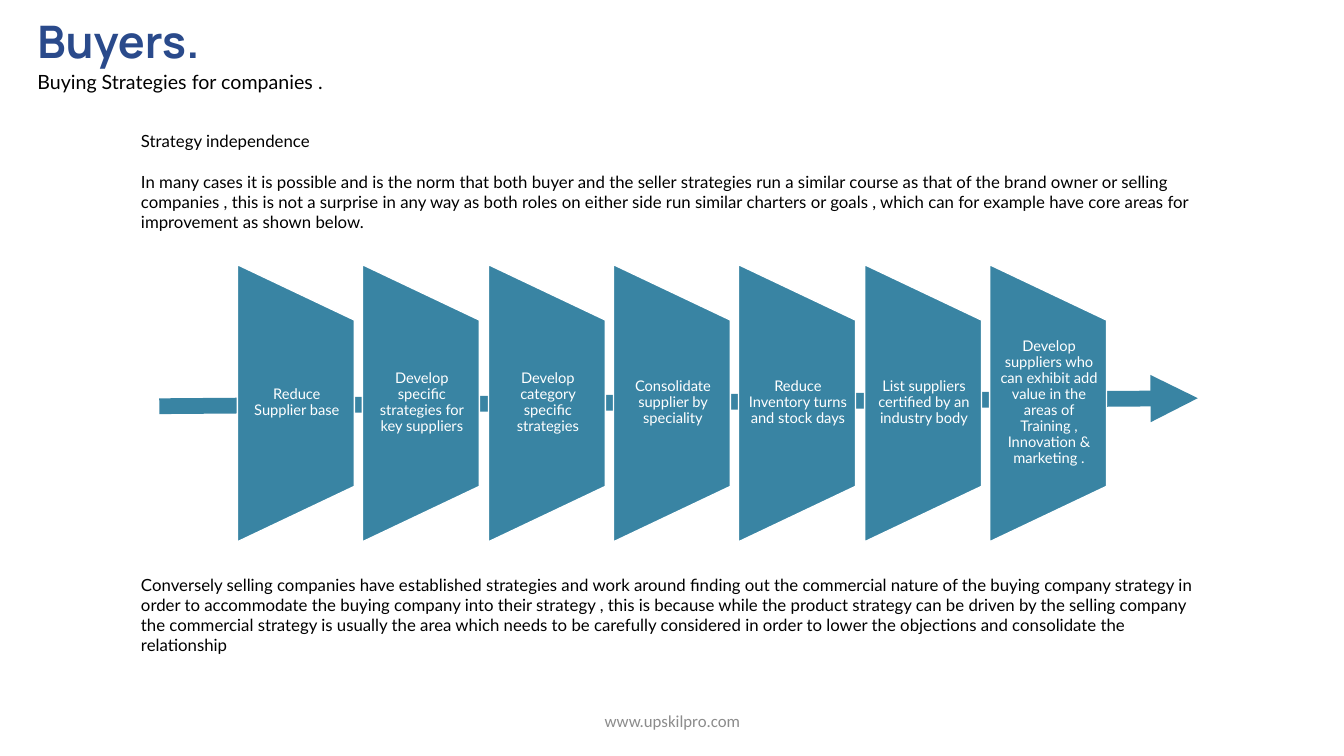
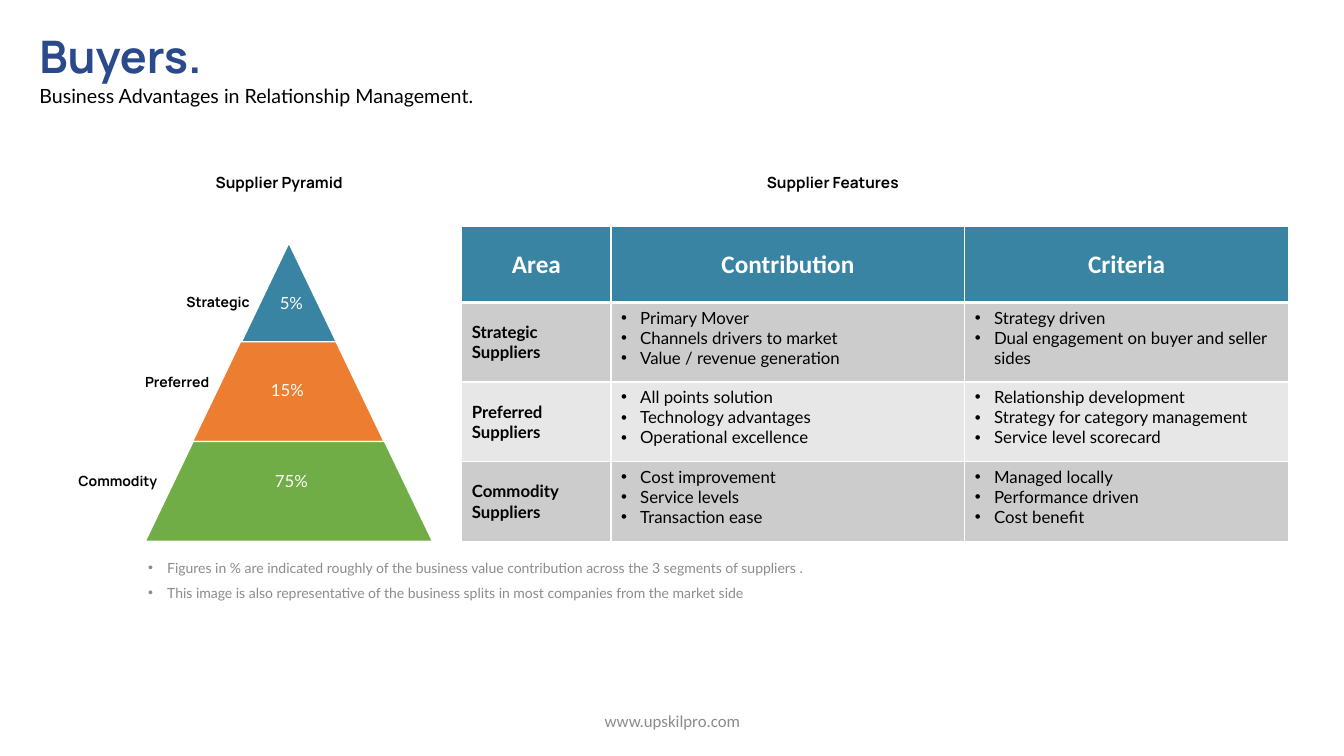
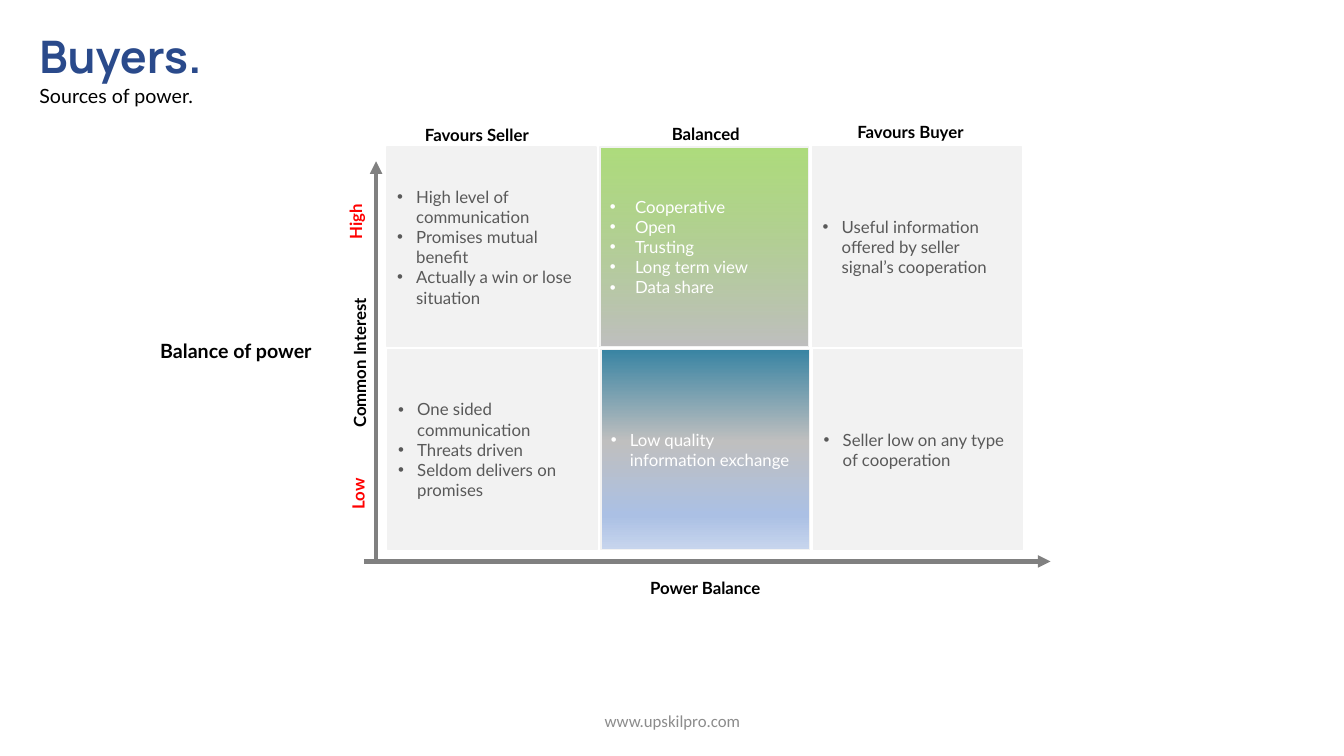
import pptx
import pptx.dml.color
import pptx.enum.shapes
import pptx.enum.text
import pptx.oxml
import pptx.oxml.ns
import pptx.util

PX = 9144
TEAL, ORANGE, GREEN = "3984A3", "ED7D31", "70AD47"
NAVY, BLACK, WHITE, RED = "2A4A8B", "000000", "FFFFFF", "FF0000"
MUTED, AXIS, PANEL, PANEL_TEXT = "8C8C8C", "808080", "F2F2F2", "595959"
BAND_DARK, BAND_LIGHT = "CCCCCC", "E7E7E7"
BODY, HEADING, PLAIN = "Lato", "Manrope", "Calibri"
ALIGN = pptx.enum.text.PP_ALIGN
ANCHOR = pptx.enum.text.MSO_ANCHOR
SHAPE = pptx.enum.shapes.MSO_SHAPE

STRATEGY_INTRO = [
    "Strategy independence",
    "In many cases it is possible and is the norm that both buyer and the seller strategies run a similar "
    "course as that of the brand owner or selling companies , this is not a surprise in any way as both roles "
    "on either side run similar charters or goals , which can for example have core areas for improvement as "
    "shown below.",
]
STRATEGY_CLOSE = [
    "Conversely selling companies have established strategies and work around finding out the commercial "
    "nature of the buying company strategy in order to accommodate the buying company into their strategy , "
    "this is because while the product strategy can be driven by the selling company the commercial strategy "
    "is usually the area which needs to be carefully considered in order to lower the objections and "
    "consolidate the relationship",
]
STEPS = [
    "Reduce Supplier base",
    "Develop specific strategies for key suppliers",
    "Develop category specific strategies",
    "Consolidate supplier by speciality",
    "Reduce Inventory turns and stock days",
    "List suppliers certified by an industry body",
    "Develop suppliers who can exhibit add value in the areas of Training , Innovation & marketing .",
]
TIERS = [
    ("Strategic", "5%", TEAL, (175, 286), (260, 286)),
    ("Preferred", "15%", ORANGE, (134, 365), (256, 372)),
    ("Commodity", "75%", GREEN, (68, 464), (260, 462)),
]
FEATURES = [
    ("Strategic Suppliers",
     ["Primary Mover", "Channels drivers to market", "Value / revenue generation"],
     ["Strategy driven", "Dual engagement on buyer and seller sides"]),
    ("Preferred Suppliers",
     ["All points solution", "Technology advantages", "Operational excellence"],
     ["Relationship development", "Strategy for category management", "Service level scorecard"]),
    ("Commodity Suppliers",
     ["Cost improvement", "Service levels", "Transaction ease"],
     ["Managed locally", "Performance driven", "Cost benefit"]),
]
PYRAMID_NOTES = [
    "Figures in % are indicated roughly of the business value contribution across the 3 segments of suppliers .",
    "This image is also representative of the business splits in most companies from the market side",
]
POWER_GRID = [
    [["High level of communication", "Promises mutual benefit", "Actually a win or lose situation"],
     ["Cooperative", "Open", "Trusting", "Long term view", "Data share"],
     ["Useful information offered by seller signal’s cooperation"]],
    [["One sided communication", "Threats driven", "Seldom delivers on promises"],
     ["Low quality information exchange"],
     ["Seller low on any type of cooperation"]],
]
BALANCED_GRADIENTS = [
    [(0, "92D050", 74), (100, "BFBFBF", 100)],
    [(0, TEAL, 100), (46, "BFBFBF", 100), (83, "ABC0E4", 100), (100, "C7D5ED", 100)],
]


def px(*lengths):
    return [pptx.util.Emu(length * PX) for length in lengths]


def rgb(code):
    return pptx.dml.color.RGBColor.from_string(code)


def xml(tag, content="", attributes=""):
    namespace = pptx.oxml.ns.nsdecls("a")
    return pptx.oxml.parse_xml(f"<a:{tag} {namespace} {attributes}>{content}</a:{tag}>")


def add_run(paragraph, text, size, color, font=BODY, bold=False):
    run = paragraph.add_run()
    run.text = text
    run.font.size = pptx.util.Pt(size)
    run.font.name = font
    run.font.bold = bold
    run.font.color.rgb = rgb(color)


def add_bullet(paragraph, indent):
    properties = paragraph._p.get_or_add_pPr()
    properties.set("marL", str(indent * PX))
    properties.set("indent", str(-indent * PX))
    properties.append(xml("buFont", attributes='typeface="Arial"'))
    properties.append(xml("buChar", attributes='char="•"'))


def write(frame, texts, size=12, color=BLACK, font=BODY, bold=False, align=ALIGN.LEFT,
          indent=0, after=0, spacing=None):
    frame.word_wrap = True
    for index, text in enumerate(texts):
        paragraph = frame.add_paragraph() if index else frame.paragraphs[0]
        if indent:
            add_bullet(paragraph, indent)
        paragraph.alignment = align
        paragraph.space_after = pptx.util.Pt(after)
        if spacing:
            paragraph.line_spacing = spacing
        add_run(paragraph, text, size, color, font, bold)


def add_text(slide, box, texts, anchor=ANCHOR.TOP, rotation=0, **style):
    shape = slide.shapes.add_textbox(*px(*box))
    shape.rotation = rotation
    shape.text_frame.vertical_anchor = anchor
    write(shape.text_frame, texts, **style)
    return shape


def add_label(slide, box, text, **style):
    return add_text(slide, box, [text], **{"bold": True, "align": ALIGN.CENTER, **style})


def add_filled(slide, kind, box, fill, line=WHITE):
    shape = slide.shapes.add_shape(kind, *px(*box))
    shape.shadow.inherit = False
    shape.fill.solid()
    shape.fill.fore_color.rgb = rgb(fill)
    shape.line.color.rgb = rgb(line)
    shape.line.width = pptx.util.Pt(1)
    return shape


def add_arrow(slide, start, end, color, width):
    arrow = slide.shapes.add_connector(pptx.enum.shapes.MSO_CONNECTOR.STRAIGHT, *px(*start, *end))
    arrow.line.color.rgb = rgb(color)
    arrow.line.width = pptx.util.Pt(width)
    arrow.line._get_or_add_ln().append(xml("tailEnd", attributes='type="triangle"'))
    arrow._element.spPr.append(xml("effectLst"))


def set_gradient(shape, stops):
    content = "".join(
        f'<a:gs pos="{position * 1000}"><a:srgbClr val="{color}">'
        f'<a:alpha val="{opacity * 1000}"/></a:srgbClr></a:gs>'
        for position, color, opacity in stops)
    properties = shape._element.spPr
    solid = properties.find(pptx.oxml.ns.qn("a:solidFill"))
    properties.replace(solid, xml("gradFill", f'<a:gsLst>{content}</a:gsLst><a:lin ang="5400000" scaled="0"/>'))


def set_cell(cell, texts, fill, anchor, bottom=1, **style):
    write(cell.text_frame, texts, **style)
    cell.vertical_anchor = anchor
    properties = cell._tc.get_or_add_tcPr()
    for side, width in (("lnL", 1), ("lnR", 1), ("lnT", 1), ("lnB", bottom)):
        properties.append(xml(side, f'<a:solidFill><a:srgbClr val="{WHITE}"/></a:solidFill>',
                              f'w="{pptx.util.Pt(width)}"'))
    cell.fill.solid()
    cell.fill.fore_color.rgb = rgb(fill)


def add_slide(presentation, subtitle, left=29, top=23):
    slide = presentation.slides.add_slide(presentation.slide_layouts[5])
    title = slide.shapes.title
    title.left, title.top, title.width, title.height = px(left, top, 701, 88)
    frame = title.text_frame
    frame.auto_size = pptx.enum.text.MSO_AUTO_SIZE.NONE
    frame.vertical_anchor = ANCHOR.TOP
    write(frame, ["Buyers."], size=32, color=NAVY, font=HEADING, bold=True)
    paragraph = frame.add_paragraph()
    paragraph.alignment = ALIGN.LEFT
    paragraph.line_spacing = 1.07
    add_run(paragraph, subtitle, 14, BLACK)
    add_text(slide, (442, 695, 450, 40), ["www.upskilpro.com"], anchor=ANCHOR.MIDDLE,
             color=MUTED, font=PLAIN, align=ALIGN.CENTER)
    return slide


def add_step(slide, left, text):
    width, height, middle = 116, 275, 400
    block = add_filled(slide, SHAPE.FLOWCHART_MANUAL_OPERATION,
                       (left + (width - height) // 2, middle - width // 2, height, width), TEAL)
    block.rotation = 270
    label = add_text(slide, (left, 317, width, 165), [text], anchor=ANCHOR.MIDDLE,
                     size=10.5, color=WHITE, align=ALIGN.CENTER, spacing=0.9)
    frame = label.text_frame
    frame.margin_left, frame.margin_top, frame.margin_right, frame.margin_bottom = px(8, 0, 7, 0)


def build_strategies(presentation):
    slide = add_slide(presentation, "Buying Strategies for companies .", 27, 9)
    add_text(slide, (130, 125, 1072, 120), STRATEGY_INTRO, after=14.4)
    add_text(slide, (130, 565, 1072, 95), STRATEGY_CLOSE)
    add_arrow(slide, (158, 403), (1188, 395), TEAL, 11.25)
    for index, text in enumerate(STEPS):
        add_step(slide, 236 + round(746 * index / 6), text)


def add_pyramid(slide):
    step, height = 95, 99
    for index, (name, share, color, name_at, share_at) in enumerate(TIERS):
        width = step * (index + 1)
        tier = add_filled(slide, SHAPE.TRAPEZOID,
                          (286 - width // 2, 241 + 197 * index // 2, width, height), color)
        tier.adjustments[0] = round(step / 2 / min(width, height), 2)
        add_label(slide, (*name_at, 137, 27), name, anchor=ANCHOR.MIDDLE,
                  size=10, font=HEADING, align=ALIGN.LEFT)
        add_label(slide, (*share_at, 58, 30), share, color=WHITE, bold=False)


def add_feature_table(slide):
    table = slide.shapes.add_table(4, 3, *px(458, 225, 820, 312)).table
    table.horz_banding = False
    for column, width in zip(table.columns, px(148, 351, 321)):
        column.width = width
    for row, height in zip(table.rows, px(75, 79, 79, 79)):
        row.height = height
    for column, heading in enumerate(["Area", "Contribution", "Criteria"]):
        set_cell(table.cell(0, column), [heading], TEAL, ANCHOR.MIDDLE, bottom=3,
                 size=18, color=WHITE, font=PLAIN, bold=True, align=ALIGN.CENTER)
    for row, (area, *lists) in enumerate(FEATURES, 1):
        fill = BAND_DARK if row % 2 else BAND_LIGHT
        set_cell(table.cell(row, 0), [area], fill, ANCHOR.MIDDLE, bold=True)
        for column, items in enumerate(lists, 1):
            set_cell(table.cell(row, column), items, fill, ANCHOR.TOP, indent=19)


def build_relationships(presentation):
    slide = add_slide(presentation, "Business Advantages in Relationship Management.")
    for left, heading in ((141, "Supplier Pyramid"), (690, "Supplier Features")):
        add_label(slide, (left, 166, 272, 29), heading, anchor=ANCHOR.MIDDLE, size=11, font=HEADING)
    add_pyramid(slide)
    add_feature_table(slide)
    add_text(slide, (137, 556, 746, 40), PYRAMID_NOTES, anchor=ANCHOR.MIDDLE,
             size=10, color=MUTED, indent=19, after=6)


def add_power_grid(slide):
    for row, panels in enumerate(POWER_GRID):
        for column, items in enumerate(panels):
            balanced = column == 1
            panel = add_filled(slide, SHAPE.RECTANGLE,
                               (384 + 211 * column + row, 146 + 201 * row, 207, 198), PANEL, PANEL)
            if balanced:
                set_gradient(panel, BALANCED_GRADIENTS[row])
            panel.text_frame.vertical_anchor = ANCHOR.MIDDLE
            write(panel.text_frame, items, color=WHITE if balanced else PANEL_TEXT,
                  indent=25 if balanced and row == 0 else 19)


def build_power(presentation):
    slide = add_slide(presentation, "Sources of power.")
    add_arrow(slide, (373, 557), (373, 160), AXIS, 3)
    add_arrow(slide, (361, 557), (1042, 557), AXIS, 3)
    add_power_grid(slide)
    for left, top, heading in ((357, 119, "Favours Seller"), (584, 118, "Balanced"), (787, 116, "Favours Buyer")):
        add_label(slide, (left, top, 232, 30), heading)
    add_label(slide, (118, 331, 232, 34), "Balance of power", size=14)
    add_label(slide, (613, 568, 173, 30), "Power Balance")
    for box, text, color in (((270, 345, 173, 30), "Common Interest", BLACK),
                             ((282, 205, 141, 30), "High", RED),
                             ((289, 475, 132, 30), "Low", RED)):
        add_label(slide, box, text, color=color, rotation=270)


def main():
    presentation = pptx.Presentation()
    presentation.slide_width, presentation.slide_height = px(1333, 750)
    build_strategies(presentation)
    build_relationships(presentation)
    build_power(presentation)
    presentation.save("out.pptx")


if __name__ == "__main__":
    main()
